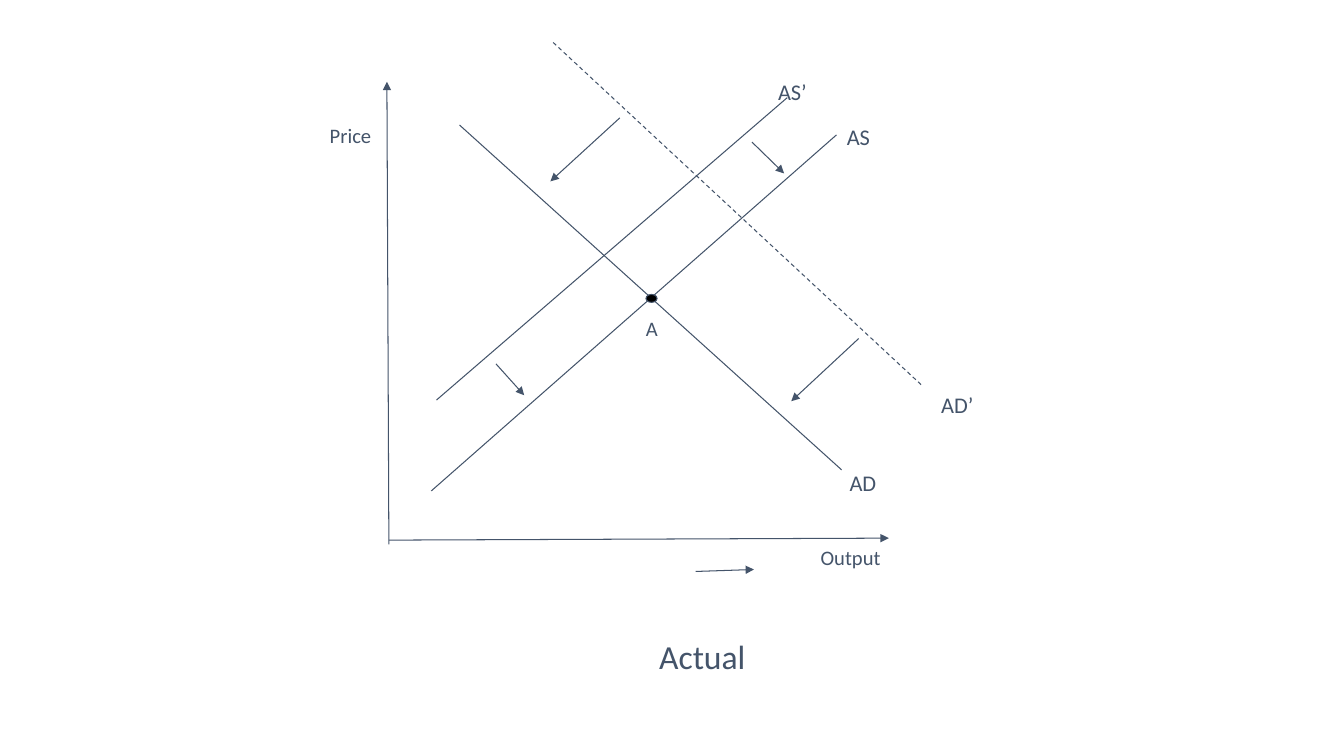
from lxml.etree import SubElement
from pptx import Presentation
from pptx.dml.color import RGBColor
from pptx.enum.dml import MSO_LINE
from pptx.enum.shapes import MSO_CONNECTOR, MSO_SHAPE
from pptx.enum.text import MSO_ANCHOR, MSO_AUTO_SIZE, PP_ALIGN
from pptx.oxml.ns import qn
from pptx.util import Cm, Pt

SLATE = RGBColor(0x44, 0x54, 0x6A)
BLACK = RGBColor(0, 0, 0)
FONT = "Calibri"
LINE_WIDTH = Pt(0.75)
INSET = Cm(0.33)
LABEL_HEIGHT = 0.74

# Lines: start x, start y, end x, end y in centimetres
AXES = [
    (9.8, 13.72, 9.75, 2.06),    # price
    (9.8, 13.61, 22.4, 13.56),   # output
]
CURVES = [
    (10.87, 12.37, 21.08, 3.4),  # AS
    (11.58, 3.15, 21.21, 11.84), # AD
    (11, 10.08, 19.84, 2.46),    # AS’
]
SHIFTED_DEMAND = (13.94, 1.07, 23.22, 9.7)
SHIFT_ARROWS = [
    (17.53, 14.4, 19, 14.35),    # output rises
    (21.64, 8.53, 19.94, 10.11), # demand, lower
    (15.62, 2.97, 13.87, 4.57),  # demand, upper
    (12.5, 9.17, 13.21, 9.96),   # supply, lower
    (18.95, 3.58, 19.76, 4.37),  # supply, upper
]

# Labels: text, left, top, width in centimetres, size in points
LABELS = [
    ("Price", 7.98, 2.77, 3.58, 14.7),
    ("Output", 20.35, 13.41, 3.28, 14.7),
    ("A", 15.95, 7.62, 0.89, 14.7),
    ("AS", 21.01, 2.77, 1.8, 16),
    ("AD", 21.08, 11.48, 1.8, 16),
    ("AD’", 23.39, 9.53, 1.8, 16),
    ("AS’", 19.28, 1.63, 1.8, 16),
]


def add_line(page, ends, arrow=False, dashed=False):
    line = page.shapes.add_connector(
        MSO_CONNECTOR.STRAIGHT, *(Cm(value) for value in ends))
    line.line.color.rgb = SLATE
    line.line.width = LINE_WIDTH
    if dashed:
        line.line.dash_style = MSO_LINE.DASH
    properties = line._element.spPr
    if arrow:
        SubElement(properties.find(qn("a:ln")), qn("a:tailEnd"), type="triangle")
    SubElement(properties, qn("a:effectLst"))


def write_text(box, text, size, align=PP_ALIGN.LEFT):
    frame = box.text_frame
    frame.text = text
    frame.word_wrap = True
    frame.auto_size = MSO_AUTO_SIZE.NONE
    frame.vertical_anchor = MSO_ANCHOR.TOP
    frame.margin_left = frame.margin_right = INSET
    frame.margin_top = frame.margin_bottom = INSET
    para = frame.paragraphs[0]
    para.alignment = align
    for span in para.runs:
        span.font.name = FONT
        span.font.size = Pt(size)
        span.font.color.rgb = SLATE


def add_label(page, text, left, top, width, size):
    box = page.shapes.add_textbox(Cm(left), Cm(top), Cm(width), Cm(LABEL_HEIGHT))
    write_text(box, text, size)


def add_title(page, text):
    title = page.shapes.title
    title.left, title.top = Cm(2.11), Cm(15.7)
    title.width, title.height = Cm(31.37), Cm(1.04)
    write_text(title, text, 24, PP_ALIGN.CENTER)


def add_equilibrium(page):
    dot = page.shapes.add_shape(
        MSO_SHAPE.OVAL, Cm(16.28), Cm(7.42), Cm(0.28), Cm(0.2))
    dot.shadow.inherit = False
    dot.fill.solid()
    dot.fill.fore_color.rgb = BLACK
    dot.line.color.rgb = SLATE
    dot.line.width = LINE_WIDTH


def main():
    deck = Presentation()
    deck.slide_width, deck.slide_height = Cm(33.87), Cm(19.05)
    page = deck.slides.add_slide(deck.slide_layouts.get_by_name("Title Only"))
    add_title(page, "Actual ")

    # Axes and curves
    for ends in AXES:
        add_line(page, ends, arrow=True)
    for ends in CURVES:
        add_line(page, ends)
    add_line(page, SHIFTED_DEMAND, dashed=True)

    # Equilibrium point, shifts and labels
    add_equilibrium(page)
    for ends in SHIFT_ARROWS:
        add_line(page, ends, arrow=True)
    for label in LABELS:
        add_label(page, *label)

    deck.save("out.pptx")


if __name__ == "__main__":
    main()
